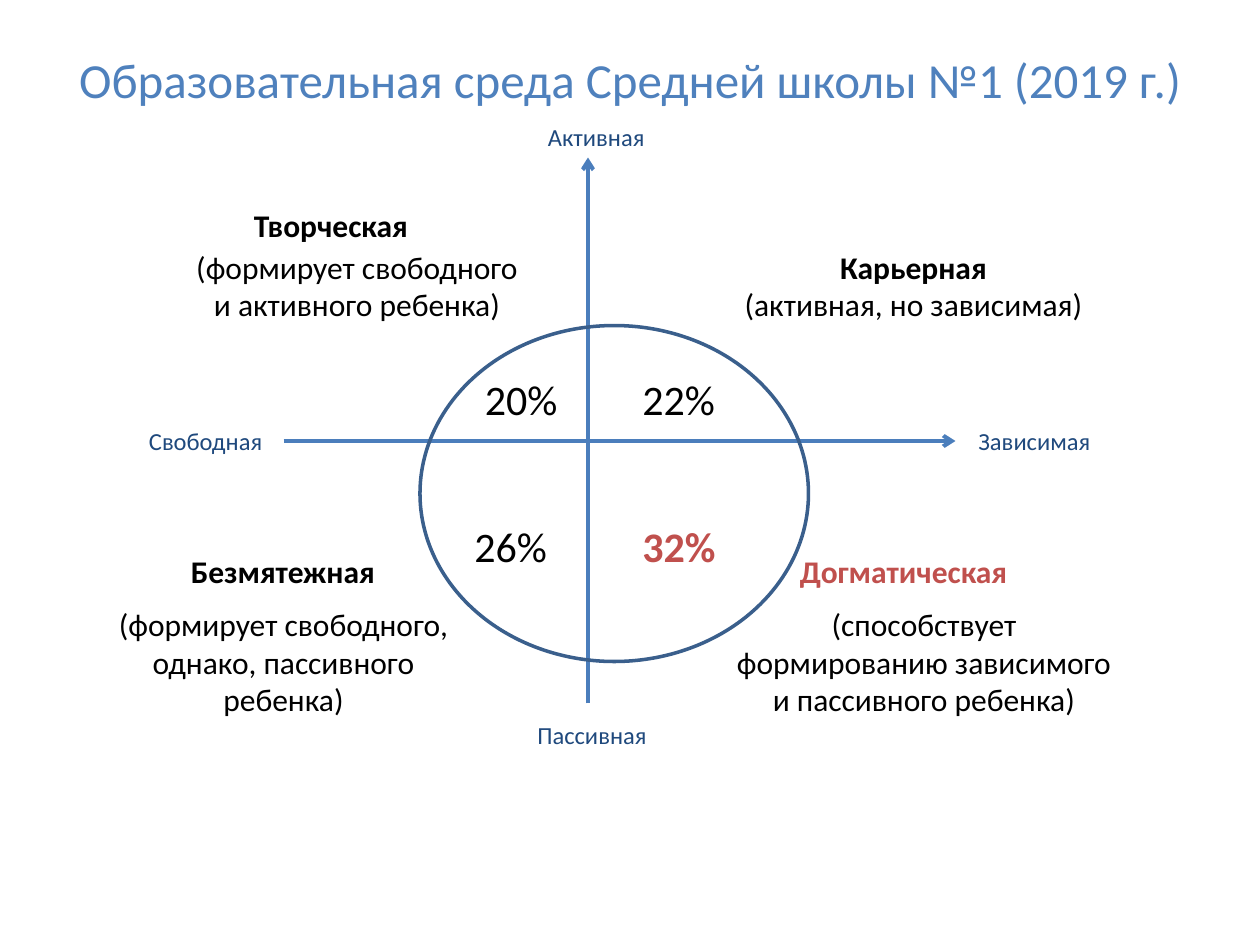
from lxml.etree import SubElement
from pptx import Presentation
from pptx.dml.color import RGBColor
from pptx.enum.shapes import MSO_CONNECTOR, MSO_SHAPE
from pptx.enum.text import MSO_ANCHOR as Anchor, PP_ALIGN as Align
from pptx.oxml.ns import qn
from pptx.util import Pt

FONT = "Calibri"
COLORS = {
    "title": "4F81BD",
    "axis": "4B7EBC",
    "ellipse": "3A5F8C",
    "label": "1F497D",
    "text": "000000",
    "accent": "C0504D",
}


def color(name):
    return RGBColor.from_string(COLORS[name])


def add_text(page, text, left, top, width, height, size, ink="text",
             bold=False, align=Align.LEFT, anchor=Anchor.TOP):
    """Add a text box with one paragraph per line of text."""
    box = page.shapes.add_textbox(Pt(left), Pt(top), Pt(width), Pt(height))
    frame = box.text_frame
    frame.word_wrap = True
    frame.vertical_anchor = anchor
    frame.text = text
    for para in frame.paragraphs:
        para.alignment = align
        for span in para.runs:
            span.font.name = FONT
            span.font.size = Pt(size)
            span.font.bold = bold
            span.font.color.rgb = color(ink)
    return box


def add_axis(page, x1, y1, x2, y2):
    """Add an axis with an arrowhead at its end."""
    axis = page.shapes.add_connector(
        MSO_CONNECTOR.STRAIGHT, Pt(x1), Pt(y1), Pt(x2), Pt(y2))
    axis.line.color.rgb = color("axis")
    axis.line.width = Pt(2.25)
    SubElement(axis.line._get_or_add_ln(), qn("a:tailEnd"), type="arrow")
    SubElement(axis._element.spPr, qn("a:effectLst"))


def add_ellipse(page, left, top, width, height):
    ellipse = page.shapes.add_shape(
        MSO_SHAPE.OVAL, Pt(left), Pt(top), Pt(width), Pt(height))
    ellipse.shadow.inherit = False
    ellipse.fill.background()
    ellipse.line.color.rgb = color("ellipse")
    ellipse.line.width = Pt(2)


def main():
    deck = Presentation()
    deck.slide_width, deck.slide_height = Pt(720), Pt(540)
    page = deck.slides.add_slide(deck.slide_layouts[6])

    # Title
    add_text(page, "Образовательная среда Средней школы №1 (2019 г.)",
             36, 0, 648, 90, 28, "title", align=Align.CENTER,
             anchor=Anchor.MIDDLE)

    # Axes and the ellipse over them
    add_axis(page, 336, 402, 336, 90)
    add_axis(page, 162, 252, 546, 252)
    add_ellipse(page, 240, 186, 222, 192)

    # Names of the environment types
    for text, left, top, width, ink in (
        ("Творческая", 138, 114, 108, "text"),
        ("Безмятежная", 102, 312, 126, "text"),
        ("Догматическая", 450, 312, 138, "accent"),
    ):
        add_text(page, text, left, top, width, 29, 18, ink, bold=True)

    # Descriptions of the environment types
    for text, left, top, width, height in (
        ("(формирует свободного и активного ребенка)", 102, 138, 204, 51),
        ("(формирует свободного, однако, пассивного ребенка)",
         60, 342, 204, 73),
        ("(способствует формированию зависимого и пассивного ребенка)",
         408, 342, 240, 73),
    ):
        add_text(page, text, left, top, width, height, 18,
                 align=Align.CENTER)

    # Career type: name and description share one box
    career = add_text(page, "Карьерная\n(активная, но зависимая)",
                      408, 138, 228, 51, 18, align=Align.CENTER)
    career.text_frame.paragraphs[0].runs[0].font.bold = True

    # Shares of each quadrant
    for text, left, top in (("20%", 270, 210), ("22%", 360, 210),
                            ("26%", 264, 294)):
        add_text(page, text, left, top, 66, 36, 24)
    add_text(page, "32%", 360, 294, 66, 36, 24, "accent", bold=True)

    # Axis labels
    for text, left, top in (("Активная", 306, 66), ("Пассивная", 300, 408),
                            ("Свободная", 78, 240), ("Зависимая", 552, 240)):
        add_text(page, text, left, top, 84, 24, 14, "label")

    deck.save("out.pptx")


if __name__ == "__main__":
    main()
